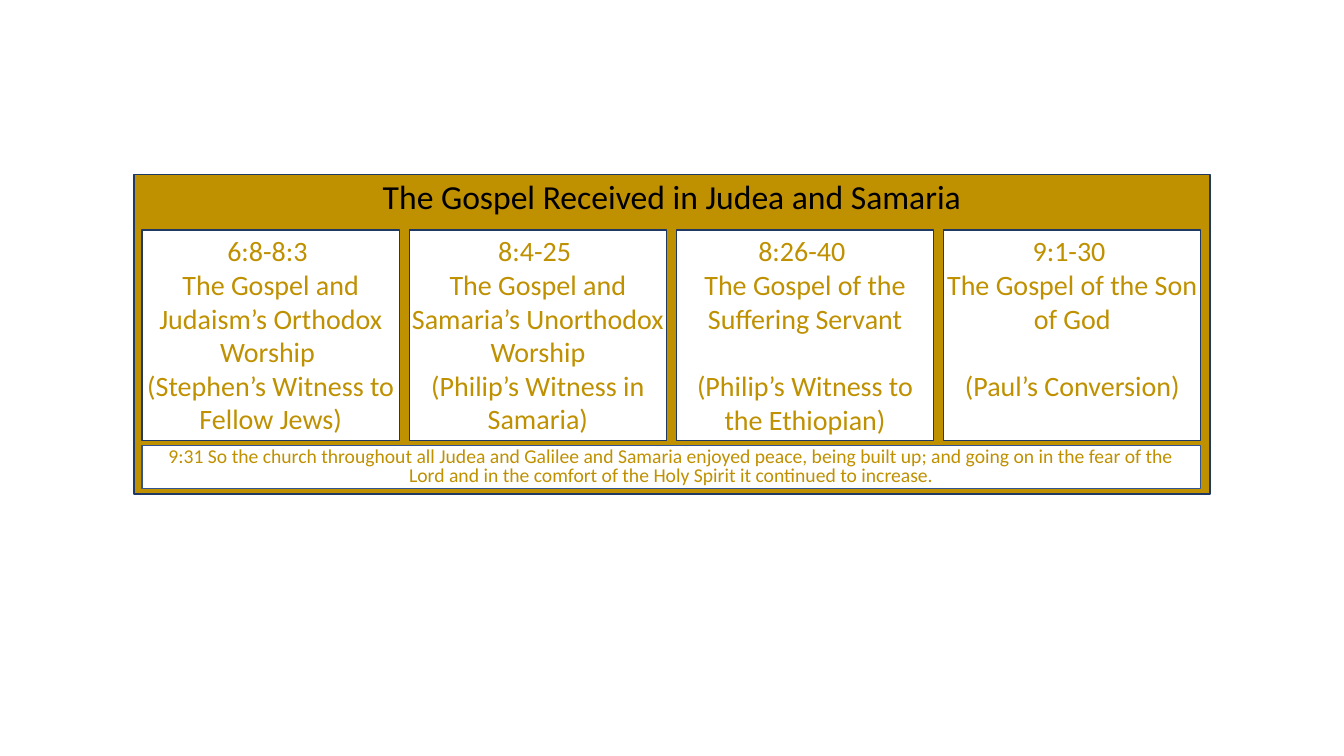
from dataclasses import dataclass

from pptx import Presentation
from pptx import util as u
from pptx.dml.color import RGBColor
from pptx.enum import shapes, text

GOLD = RGBColor(0xBF, 0x90, 0x00)
WHITE = RGBColor(0xFF, 0xFF, 0xFF)
BLACK = RGBColor(0x00, 0x00, 0x00)
NAVY = RGBColor(0x20, 0x38, 0x64)
BLUE = RGBColor(0x32, 0x54, 0x91)
FONT = "Calibri"

# Grid in inches: four columns, with a passage row above a verse row
GRID_LEFT, COLUMN_WIDTH, COLUMN_GAP = 1.41, 2.55, 0.1
PASSAGE_TOP, PASSAGE_HEIGHT = 2.28, 2.09
VERSE_TOP, VERSE_HEIGHT = 4.42, 0.43
BLANK_LINE = 24.4  # points


@dataclass(frozen=True)
class Style:
    fill: RGBColor
    line: RGBColor
    color: RGBColor
    size: int
    insets: tuple[float, float, float, float]
    anchor: text.MSO_ANCHOR = text.MSO_ANCHOR.TOP
    spacing: float = 1.0


@dataclass(frozen=True)
class Passage:
    reference: str
    theme: str
    witness: str
    witness_gap: float = 0


PANEL = Style(GOLD, NAVY, BLACK, 24, (0.1, 0.02, 0.1, 0.05))
CARD = Style(WHITE, NAVY, GOLD, 20, (0, 0.04, 0, 0))
VERSE = Style(WHITE, BLUE, GOLD, 14, (0.1, 0.05, 0.1, 0.05), text.MSO_ANCHOR.MIDDLE, 0.8)

PASSAGES = [
    Passage("6:8-8:3 ", "The Gospel and Judaism’s Orthodox Worship ",
            "(Stephen’s Witness to Fellow Jews)"),
    Passage("8:4-25 ", "The Gospel and Samaria’s Unorthodox Worship",
            "(Philip’s Witness in Samaria)"),
    Passage("8:26-40 ", "The Gospel of the Suffering Servant",
            "(Philip’s Witness to the Ethiopian)", BLANK_LINE),
    Passage("9:1-30 ", "The Gospel of the Son of God",
            "(Paul’s Conversion)", BLANK_LINE),
]


def add_box(parent, left: float, top: float, width: float, height: float,
            wording: str, style: Style):
    """Draw a filled rectangle with centred text and return its text frame."""
    box = parent.shapes.add_shape(
        shapes.MSO_SHAPE.RECTANGLE, *map(u.Inches, (left, top, width, height)))
    box.shadow.inherit = False
    box.fill.solid()
    box.fill.fore_color.rgb = style.fill
    box.line.color.rgb = style.line
    box.line.width = u.Pt(1)

    frame = box.text_frame
    frame.word_wrap = True
    frame.vertical_anchor = style.anchor
    (frame.margin_left, frame.margin_top,
     frame.margin_right, frame.margin_bottom) = map(u.Inches, style.insets)
    frame.text = wording
    for paragraph in frame.paragraphs:
        paragraph.alignment = text.PP_ALIGN.CENTER
        paragraph.line_spacing = style.spacing
        for run in paragraph.runs:
            run.font.name = FONT
            run.font.size = u.Pt(style.size)
            run.font.color.rgb = style.color
    return frame


def add_passage(parent, column: int, passage: Passage) -> None:
    """Place one passage card in its grid column."""
    left = GRID_LEFT + column * (COLUMN_WIDTH + COLUMN_GAP)
    wording = "\n".join((passage.reference, passage.theme, passage.witness))
    frame = add_box(parent, left, PASSAGE_TOP, COLUMN_WIDTH, PASSAGE_HEIGHT, wording, CARD)
    frame.paragraphs[-1].space_before = u.Pt(passage.witness_gap)


def main() -> None:
    deck = Presentation()
    deck.slide_width, deck.slide_height = u.Inches(13.33), u.Inches(7.5)
    slide = deck.slides.add_slide(deck.slide_layouts[6])
    outline = slide.shapes.add_group_shape()

    # Gold panel with the heading
    add_box(outline, 1.33, 1.73, 10.67, 3.17,
            "The Gospel Received in Judea and Samaria", PANEL)

    # Passage cards
    for column, passage in enumerate(PASSAGES):
        add_passage(outline, column, passage)

    # Summary verse across all columns
    count = len(PASSAGES)
    verse_width = count * COLUMN_WIDTH + (count - 1) * COLUMN_GAP
    add_box(outline, GRID_LEFT, VERSE_TOP, verse_width, VERSE_HEIGHT,
            "9:31 So the church throughout all Judea and Galilee and Samaria enjoyed "
            "peace, being built up; and going on in the fear of the Lord and in the "
            "comfort of the Holy Spirit it continued to increase.", VERSE)

    deck.save("out.pptx")


if __name__ == "__main__":
    main()
